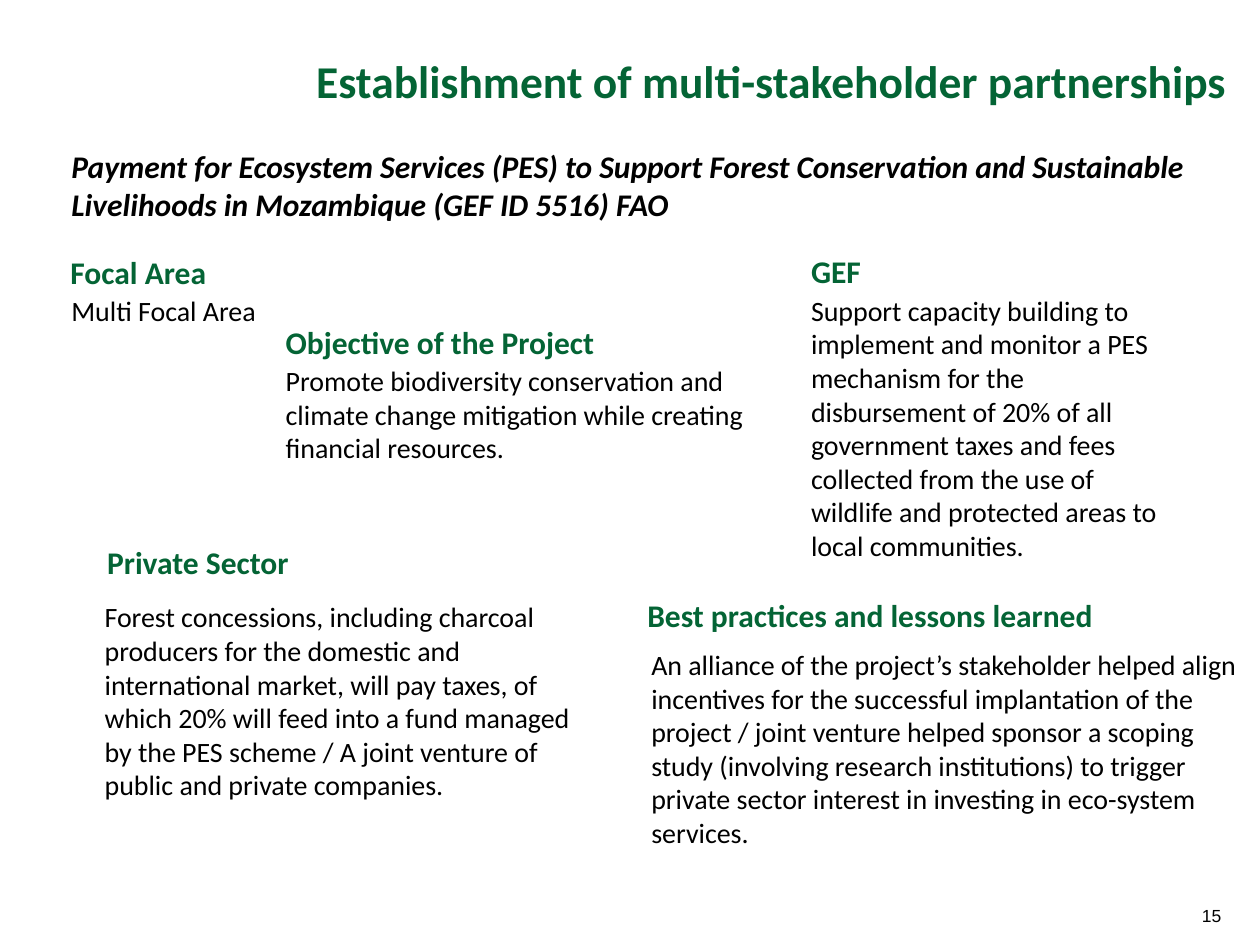
from pptx import Presentation
from pptx import util as u
from pptx.dml.color import RGBColor
from pptx.enum import shapes, text

GREEN = RGBColor(0x04, 0x64, 0x35)
BLACK = RGBColor(0, 0, 0)
WHITE = RGBColor(255, 255, 255)

HEADINGS = [
    ("Focal Area", 1.17, 4.98, 4.01),
    ("Objective of the Project", 5.51, 6.38, 6.99),
    ("GEF", 16.1, 4.95, 4.01),
    ("Private Sector", 1.91, 10.82, 5.72),
    ("Best practices and lessons learned", 12.8, 11.89, 9.73),
]
BODIES = [
    ("Multi Focal Area", 1.19, 5.79, 5.08, 0.94),
    ("Promote biodiversity conservation and climate change mitigation while "
     "creating financial resources.", 5.51, 7.21, 10.26, 2.31),
    ("Support capacity building to implement and monitor a PES mechanism for "
     "the disbursement of 20% of all government taxes and fees collected from "
     "the use of wildlife and protected areas to local communities.",
     16.1, 5.79, 7.87, 5.74),
]
PANELS = [
    ("Forest concessions, including charcoal producers for the domestic and "
     "international market, will pay taxes, of which 20% will feed into a fund "
     "managed by the PES scheme / A joint venture of public and private "
     "companies.", 2.11, 12.07, 9.53, 4.11),
    ("An alliance of the project’s stakeholder helped align incentives for the "
     "successful implantation of the project / joint venture helped sponsor a "
     "scoping study (involving research institutions) to trigger private "
     "sector interest in investing in eco-system services.",
     13.13, 13.03, 11.86, 4.11),
]


def write(box, words, size=16, font="Calibri", color=BLACK, bold=False,
          italic=False, align=text.PP_ALIGN.LEFT, anchor=text.MSO_ANCHOR.TOP,
          inset=True, wrap=True):
    """Put one formatted paragraph into a shape."""
    frame = box.text_frame
    frame.word_wrap = wrap
    frame.vertical_anchor = anchor
    if not inset:
        frame.margin_left = frame.margin_right = 0
        frame.margin_top = frame.margin_bottom = 0
    para = frame.paragraphs[0]
    para.alignment = align
    span = para.add_run()
    span.text = words
    span.font.size = u.Pt(size)
    span.font.name = font
    span.font.bold = bold
    span.font.italic = italic
    span.font.color.rgb = color


def add_label(page, words, left, top, width, height, **style):
    """Add a text box at a position in centimetres."""
    box = page.shapes.add_textbox(*map(u.Cm, (left, top, width, height)))
    write(box, words, **style)


def add_panel(page, words, left, top, width, height):
    """Add a white rectangle with vertically centred text."""
    box = page.shapes.add_shape(shapes.MSO_SHAPE.RECTANGLE,
                                *map(u.Cm, (left, top, width, height)))
    box.shadow.inherit = False
    box.fill.solid()
    box.fill.fore_color.rgb = WHITE
    box.line.fill.background()
    write(box, words, anchor=text.MSO_ANCHOR.MIDDLE, inset=False)


def main():
    """Build and save the partnerships slide."""
    deck = Presentation()
    deck.slide_width, deck.slide_height = u.Cm(25.4), u.Cm(19.05)
    page = deck.slides.add_slide(deck.slide_layouts[6])

    add_label(page, "15", 24.23, 18.24, 0.58, 0.43, size=10, font="Arial",
              inset=False, wrap=False)
    for words, left, top, width in HEADINGS:
        add_label(page, words, left, top, width, 1.02, size=18, color=GREEN,
                  bold=True)
    for body in BODIES:
        add_label(page, *body)
    add_label(page, "Establishment of multi-stakeholder partnerships",
              2.95, 1.07, 25.22, 1.12, size=26, color=GREEN, bold=True,
              align=text.PP_ALIGN.CENTER, inset=False)
    add_label(page, "Payment for Ecosystem Services (PES) to Support Forest "
              "Conservation and Sustainable Livelihoods in Mozambique "
              "(GEF ID 5516) FAO", 1.19, 2.84, 25.2, 1.8, size=18, bold=True,
              italic=True)
    for panel in PANELS:
        add_panel(page, *panel)

    deck.save("out.pptx")


if __name__ == "__main__":
    main()
